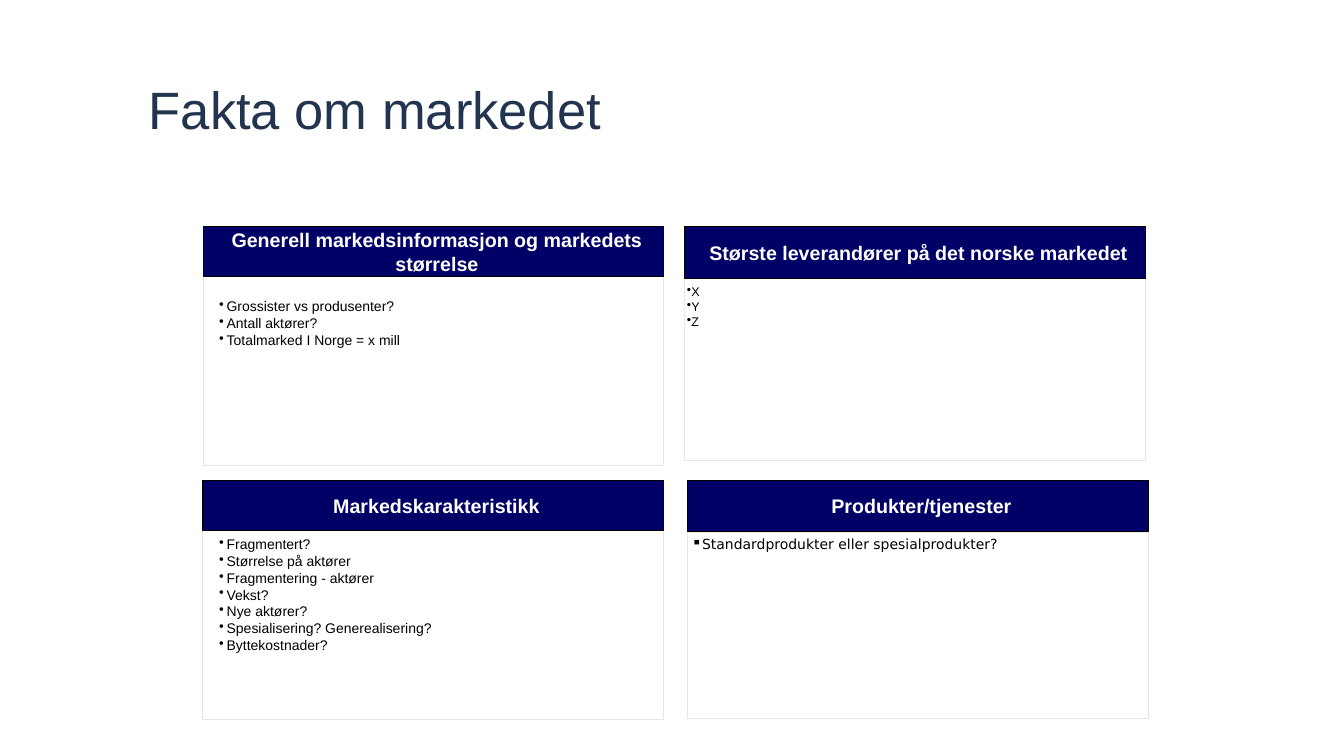
from lxml import etree
from pptx import Presentation
from pptx.dml.color import RGBColor
from pptx.enum.shapes import MSO_SHAPE
from pptx.enum.text import MSO_ANCHOR, PP_ALIGN
from pptx.oxml.ns import qn
from pptx.util import Inches, Pt

RECT = MSO_SHAPE.RECTANGLE
TOP, MIDDLE, BOTTOM = MSO_ANCHOR.TOP, MSO_ANCHOR.MIDDLE, MSO_ANCHOR.BOTTOM
LEFT, CENTER = PP_ALIGN.LEFT, PP_ALIGN.CENTER

NAVY = RGBColor(0x00, 0x00, 0x66)
SLATE = RGBColor(0x23, 0x34, 0x4F)
GREY = RGBColor(0xE7, 0xE6, 0xE6)
BLACK = RGBColor(0x00, 0x00, 0x00)
WHITE = RGBColor(0xFF, 0xFF, 0xFF)

# Each area is left, top, width, height in percent of the slide
WIDE = 34.25
PANELS = [
    ("Generell markedsinformasjon og markedets størrelse",
     (15.13, 30, WIDE, 6.5), (15.13, 36.3, WIDE, 25.2)),
    ("Markedskarakteristikk",
     (15.07, 63.6, 34.3, 6.5), (15.07, 69.9, 34.3, 25.2)),
    ("Største leverandører på det norske markedet",
     (50.96, 30, WIDE, 6.8), (50.96, 36.3, WIDE, 24.6)),
    ("Produkter/tjenester",
     (51.18, 63.5, WIDE, 6.8), (51.18, 70.4, WIDE, 24.6)),
]
FACTS = ["Grossister vs produsenter?", "Antall aktører?",
         "Totalmarked I Norge = x mill"]
TRAITS = ["Fragmentert?", "Størrelse på aktører", "Fragmentering - aktører",
          "Vekst?", "Nye aktører?", "Spesialisering? Generealisering?",
          "Byttekostnader?"]


class Deck:
    sans = "Arial"

    def __init__(self):
        self.prs = Presentation()
        self.prs.slide_width = Inches(17.78)
        self.prs.slide_height = Inches(10)
        self.slide = self.prs.slides.add_slide(self.prs.slide_layouts[5])

    def area(self, left, top, width, height):
        wide, high = self.prs.slide_width, self.prs.slide_height
        return [int(share * side / 100) for share, side in
                zip((left, top, width, height), (wide, high, wide, high))]

    def inset(self, frame, left, top, right, bottom):
        frame.margin_left, frame.margin_top = Inches(left), Inches(top)
        frame.margin_right, frame.margin_bottom = Inches(right), Inches(bottom)

    def add_text(self, para, text, size, color, bold=False, face=sans):
        run = para.add_run()
        run.text = text
        font = run.font
        font.name, font.size, font.bold = face, Pt(size), bold
        font.color.rgb = color

    def title(self, text, area):
        shape = self.slide.shapes.title
        shape.left, shape.top, shape.width, shape.height = self.area(*area)
        frame = shape.text_frame
        frame.vertical_anchor = BOTTOM
        self.inset(frame, 0, 0, 0, 0)
        para = frame.paragraphs[0]
        para.alignment, para.line_spacing = LEFT, 0.9
        self.add_text(para, text, 50, SLATE)

    def box(self, area, edge, fill=None):
        shape = self.slide.shapes.add_shape(RECT, *self.area(*area))
        shape.shadow.inherit = False
        if fill is None:
            shape.fill.background()
        else:
            shape.fill.solid()
            shape.fill.fore_color.rgb = fill
        shape.line.color.rgb = edge
        shape.line.width = Pt(0.75)
        return shape

    def header(self, text, area):
        frame = self.box(area, BLACK, NAVY).text_frame
        frame.word_wrap = True
        frame.vertical_anchor = MIDDLE
        self.inset(frame, 0.09, 0, 0, 0)
        para = frame.paragraphs[0]
        para.alignment = CENTER
        self.add_text(para, text, 18.7, WHITE, bold=True)

    def bullets(self, frame, items, size, indent=0, mark="•", face=sans):
        frame.word_wrap = True
        frame.vertical_anchor = TOP
        for i, item in enumerate(items):
            para = frame.add_paragraph() if i else frame.paragraphs[0]
            para.alignment = LEFT
            props = para._p.get_or_add_pPr()
            props.set("marL", str(Inches(indent)))
            props.set("indent", str(-Inches(indent)))
            etree.SubElement(props, qn("a:buChar")).set("char", mark)
            self.add_text(para, item, size, BLACK, face=face)

    def notes(self, area, items, size, indent=0):
        shape = self.slide.shapes.add_textbox(*self.area(*area))
        self.bullets(shape.text_frame, items, size, indent)


def main():
    deck = Deck()
    deck.title("Fakta om markedet", (11.08, 5.1, 72, 13.5))

    # Panels: an outlined body under a filled header
    for text, head, body in PANELS:
        frame = deck.box(body, GREY).text_frame
        deck.header(text, head)

    # The last panel holds its own text
    deck.inset(frame, 0.05, 0.05, 0.05, 0.05)
    deck.bullets(frame, ["Standardprodukter eller spesialprodukter?"], 13.3,
                 mark="▪", face="DejaVu Sans")

    # Lists laid over the other panels
    deck.notes((15.75, 38.9, WIDE, 10.8), FACTS, 13.3, 0.1)
    deck.notes((15.75, 70.4, 33.07, 21.2), TRAITS, 13.3, 0.1)
    deck.notes((50.56, 37, WIDE, 7.1), ["X", "Y", "Z"], 12)

    deck.prs.save("out.pptx")


if __name__ == "__main__":
    main()
